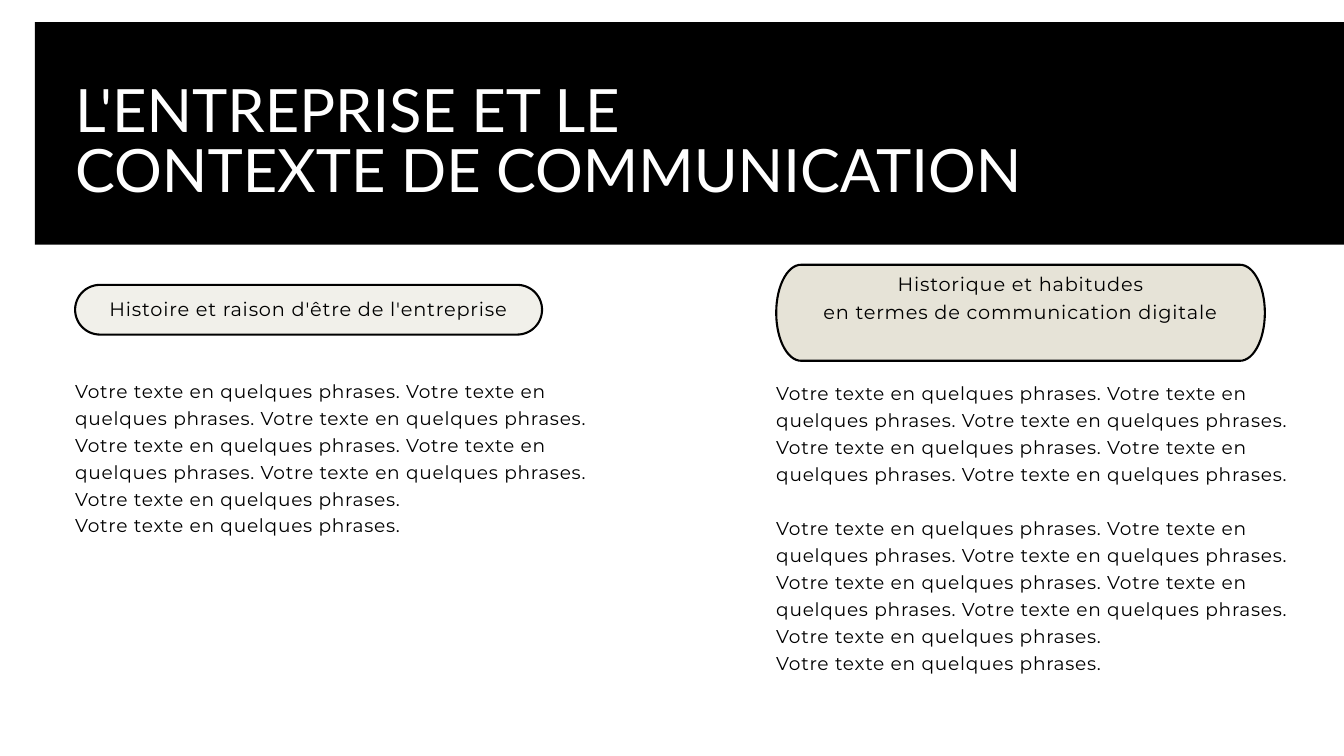
from math import cos, radians, sin

from pptx import Presentation
from pptx.dml.color import RGBColor
from pptx.enum.shapes import MSO_SHAPE
from pptx.enum.text import MSO_ANCHOR, MSO_AUTO_SIZE, PP_ALIGN
from pptx.util import Cm, Pt

RECTANGLE = MSO_SHAPE.RECTANGLE
TOP, MIDDLE = MSO_ANCHOR.TOP, MSO_ANCHOR.MIDDLE
NO_AUTOSIZE = MSO_AUTO_SIZE.NONE
LEFT, CENTER = PP_ALIGN.LEFT, PP_ALIGN.CENTER

COLORS = {"black": "000000", "white": "FFFFFF", "ivory": "F1F0EA", "sand": "E6E3D7"}
TITLE_STYLE = {"font": "Lato", "size": 64, "color": "white", "line": 64, "tracking": 0}
BODY_STYLE = {"font": "Montserrat", "size": 19.9, "color": "black", "line": 28.9, "tracking": 80}
LABEL_STYLE = {"font": "Montserrat", "size": 20.7, "color": "black", "line": 30, "tracking": 90}

TITLE = ["L'ENTREPRISE ET LE", "CONTEXTE DE COMMUNICATION"]
SENTENCE = "Votre texte en quelques phrases."
COLUMNS = [
    {
        "label": ["Histoire et raison d'être de l'entreprise"],
        "pill": (2.84, 10.77, 17.65, 1.88),
        "fill": "ivory",
        "label_lift": 0.37,
        "body": (2.84, 14.17, 21.31, 7.14),
        "sentence_counts": [3, 4, 1],
        "gap_before": None,
    },
    {
        "label": ["Historique et habitudes", "en termes de communication digitale"],
        "pill": (29.34, 10.01, 18.47, 3.63),
        "fill": "sand",
        "label_lift": 1.43,
        "body": (29.34, 14.27, 20.98, 12.32),
        "sentence_counts": [6, 3, 4, 1],
        "gap_before": 1,
    },
]
PILL_END = 0.94
PILL_INSET = 0.15


def color(name):
    return RGBColor.from_string(COLORS[name])


def write(shape, lines, style, align=LEFT, anchor=TOP, inset=0, gap_before=None):
    frame = shape.text_frame
    frame.word_wrap = True
    frame.auto_size = NO_AUTOSIZE
    frame.vertical_anchor = anchor
    frame.margin_left = frame.margin_right = Cm(inset)
    frame.margin_top = frame.margin_bottom = Cm(inset)
    for index, line in enumerate(lines):
        paragraph = frame.add_paragraph() if index else frame.paragraphs[0]
        paragraph.alignment = align
        paragraph.line_spacing = Pt(style["line"])
        paragraph.space_before = Pt(style["line"] if index and index == gap_before else 0)
        run = paragraph.add_run()
        run.text = line
        run.font.name = style["font"]
        run.font.size = Pt(style["size"])
        run.font.color.rgb = color(style["color"])
        run._r.get_or_add_rPr().set("spc", str(style["tracking"]))


def add_pill(slide, left, top, width, height, fill):
    center_y = top + height / 2
    points = []
    for center_x, start in ((left + width - PILL_END, -90), (left + PILL_END, 90)):
        for angle in range(start, start + 181, 6):
            x = center_x + PILL_END * cos(radians(angle))
            y = center_y + height / 2 * sin(radians(angle))
            points.append((Cm(x), Cm(y)))
    builder = slide.shapes.build_freeform(*points[0])
    builder.add_line_segments(points[1:], close=True)
    pill = builder.convert_to_shape()
    pill.shadow.inherit = False
    pill.fill.solid()
    pill.fill.fore_color.rgb = color(fill)
    pill.line.color.rgb = color("black")
    pill.line.width = Pt(2.25)
    return pill


def main():
    presentation = Presentation()
    presentation.slide_width = Cm(50.8)
    presentation.slide_height = Cm(28.58)
    slide = presentation.slides.add_slide(presentation.slide_layouts[5])

    band = slide.shapes.add_shape(RECTANGLE, Cm(1.32), Cm(0.84), Cm(49.48), Cm(8.41))
    band.shadow.inherit = False
    band.fill.solid()
    band.fill.fore_color.rgb = color("black")
    band.line.fill.background()

    title = slide.shapes.title
    title.left, title.top, title.width, title.height = Cm(2.84), Cm(3.2), Cm(44.96), Cm(4.67)
    write(title, TITLE, TITLE_STYLE)
    title.element.addprevious(band.element)

    for column in COLUMNS:
        body = slide.shapes.add_textbox(*map(Cm, column["body"]))
        texts = [" ".join([SENTENCE] * count) for count in column["sentence_counts"]]
        write(body, texts, BODY_STYLE, gap_before=column["gap_before"])

        pill = add_pill(slide, *column["pill"], column["fill"])
        write(pill, column["label"], LABEL_STYLE, CENTER, MIDDLE, PILL_INSET)
        pill.text_frame.margin_bottom = Cm(column["label_lift"])

    presentation.save("out.pptx")


if __name__ == "__main__":
    main()
